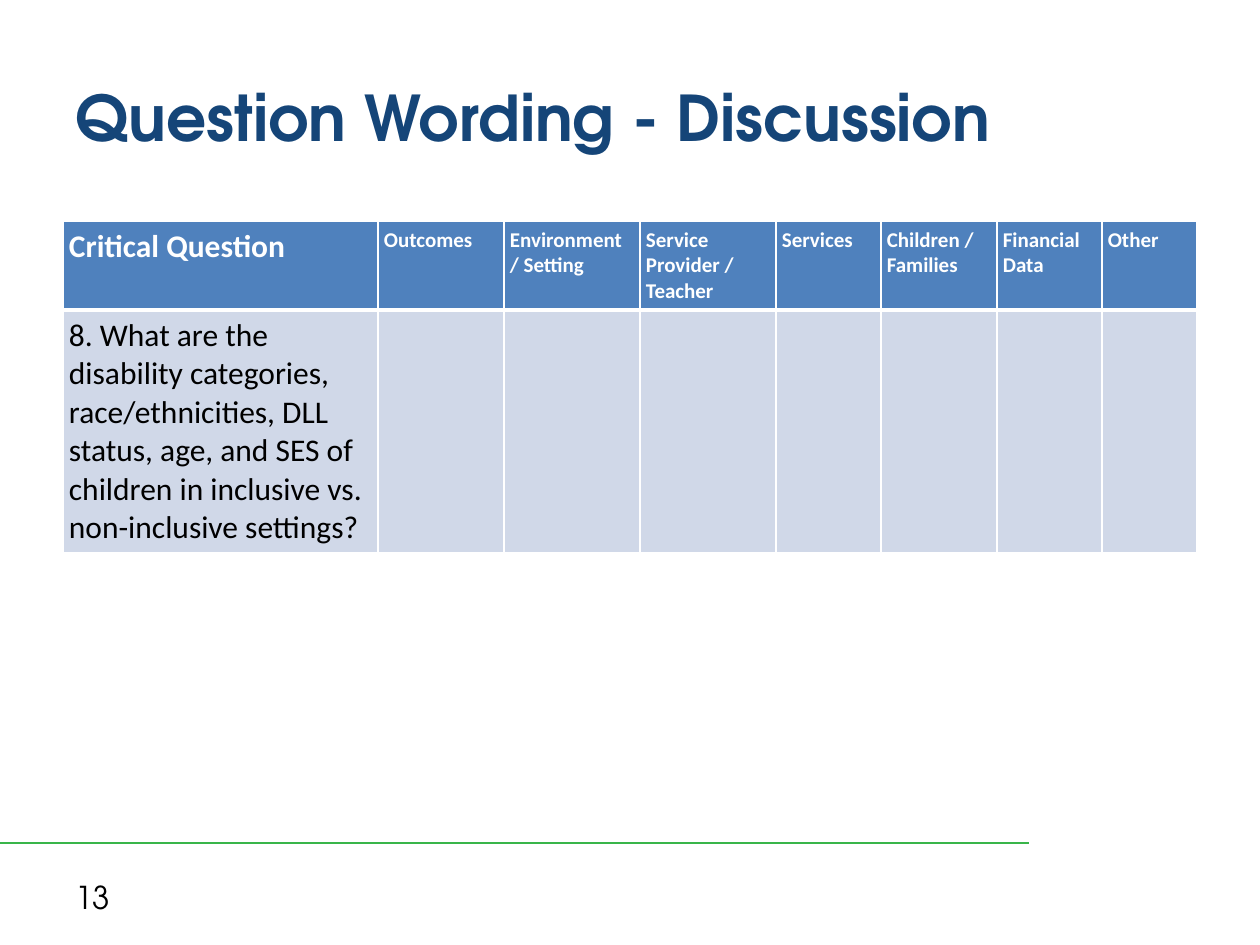
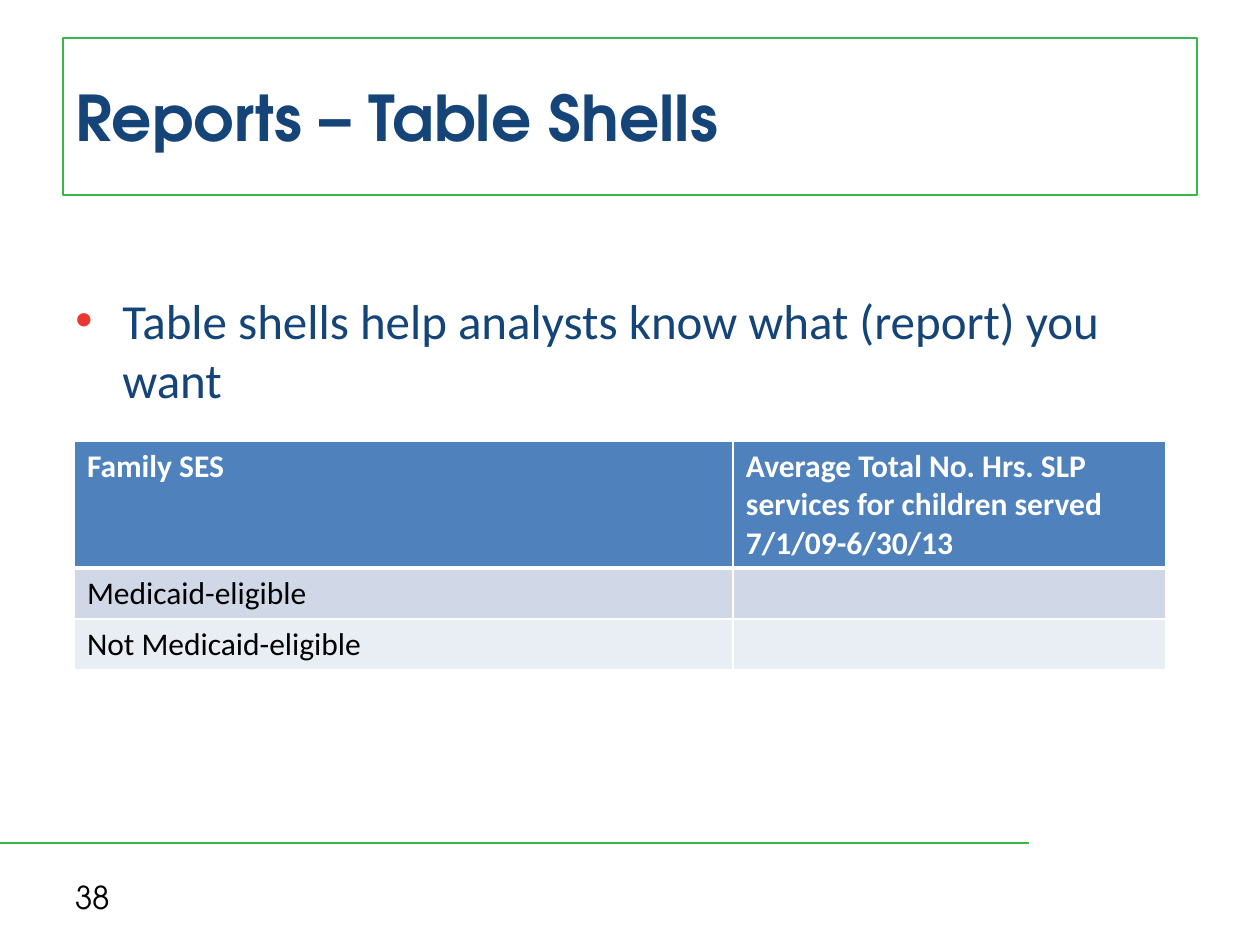
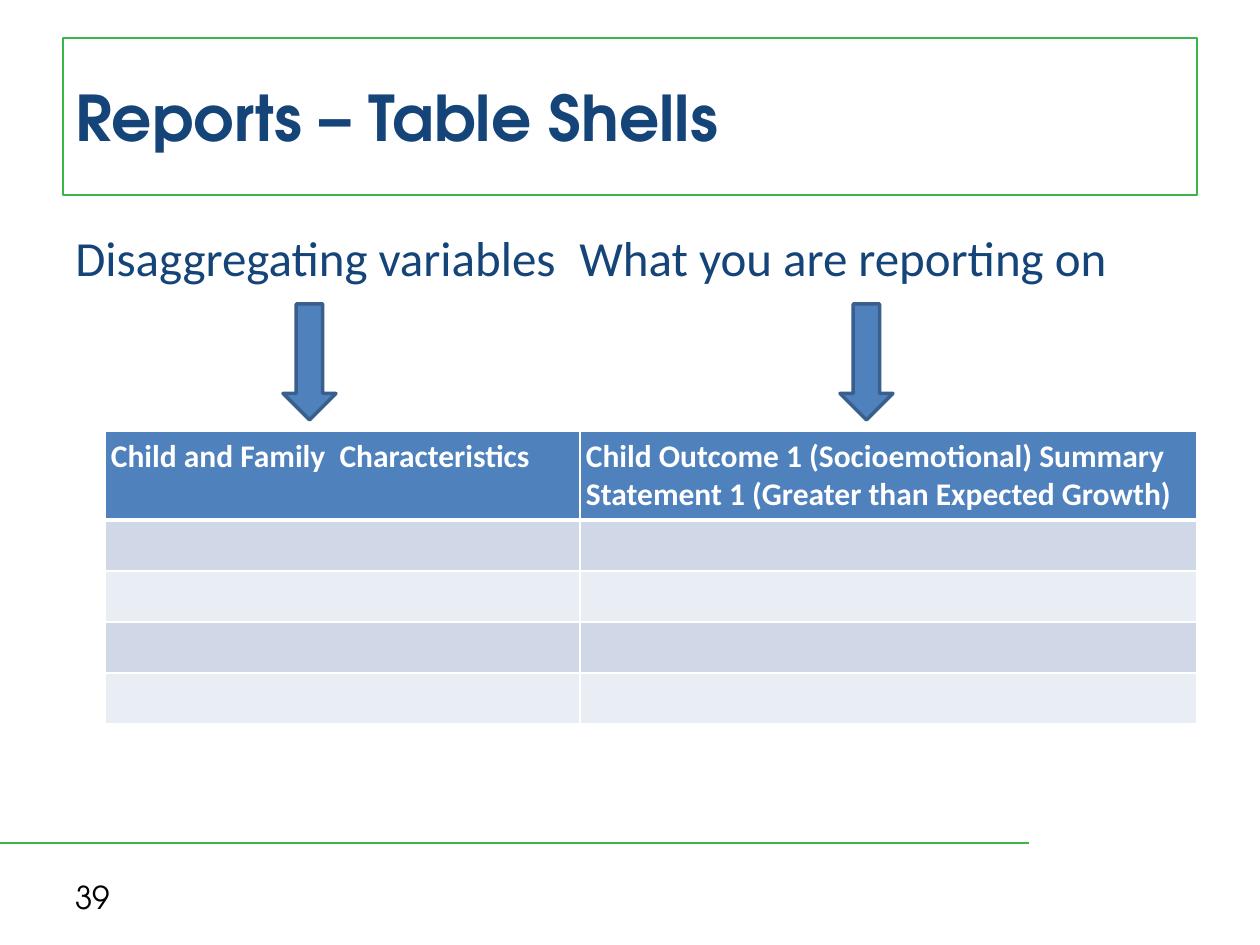
"""Build three slides on question wording and table shells."""
from dataclasses import dataclass

from lxml.etree import SubElement
from pptx import Presentation
from pptx.dml.color import RGBColor
from pptx.enum.shapes import MSO_CONNECTOR, MSO_SHAPE
from pptx.enum.text import MSO_ANCHOR
from pptx.oxml.ns import qn
from pptx.util import Emu, Pt

SLIDES = [
    {
        "number": "13",
        "title": "Question Wording - Discussion",
        "table": {
            "at": (63, 221), "inset": 6, "header_size": 12,
            "cols": [315, 126, 136, 136, 105, 116, 105, 95],
            "heights": [89, 243],
            "rows": [
                ["Critical Question", "Outcomes", "Environment / Setting",
                 "Service Provider / Teacher", "Services", "Children / Families",
                 "Financial Data", "Other"],
                ["8. What are the disability categories, race/ethnicities, DLL status, "
                 "age, and SES of children in inclusive vs. non-inclusive settings?"],
            ],
        },
    },
    {
        "number": "38",
        "title": "Reports – Table Shells",
        "framed": True,
        "table": {
            "at": (74, 441), "inset": 13, "cols": [659, 433],
            "heights": [127, 51, 51],
            "rows": [
                ["Family SES",
                 "Average Total No. Hrs. SLP services for children served 7/1/09-6/30/13"],
                ["Medicaid-eligible"],
                ["Not Medicaid-eligible"],
            ],
        },
        "body": {"at": (63, 284, 1134, 94), "bullet": "•",
                 "text": "Table shells help analysts know what (report) you want"},
    },
    {
        "number": "39",
        "title": "Reports – Table Shells",
        "framed": True,
        "table": {
            "at": (105, 431), "inset": 6, "cols": [475, 617],
            "heights": [89, 51, 51, 51, 51],
            "rows": [
                ["Child and Family  Characteristics",
                 "Child Outcome 1 (Socioemotional) Summary Statement 1 "
                 "(Greater than Expected Growth)"],
                [], [], [], [],
            ],
        },
        "body": {"at": (63, 221, 1134, 168), "tab": 504,
                 "text": "Disaggregating variables\tWhat you are reporting on"},
        "arrows": [(283, 304, 53, 116), (840, 304, 53, 116)],
    },
]


@dataclass(frozen=True)
class Theme:
    """Colours, fonts and type sizes shared by the slides."""
    navy: str = "154578"
    green: str = "39B54A"
    red: str = "ED3532"
    blue: str = "4F81BD"
    outline: str = "3A5F8C"
    white: str = "FFFFFF"
    black: str = "000000"
    bands: tuple = ("D0D8E8", "E9EDF4")
    display: str = "TeX Gyre Adventor"
    text: str = "Calibri"
    title_size: int = 36
    body_size: int = 28
    base_size: int = 18


T = Theme()
TITLE = {"name": T.display, "size": T.title_size, "bold": True, "color": T.navy}
NUMBER = {"name": T.display, "size": T.base_size, "color": T.black}
BODY = {"name": T.text, "size": T.body_size, "color": T.navy}
CELL = {"name": T.text, "size": T.base_size, "bold": False, "color": T.black}
HEADER = CELL | {"bold": True, "color": T.white}


def px(n):
    """Turn pixels at 126 to the inch into EMU."""
    return Emu(round(n * 914400 / 126))


def rgb(value):
    """Turn a hex string into a colour."""
    return RGBColor.from_string(value)


def write(p, text, fmt):
    """Add one run to a paragraph and format it."""
    r = p.add_run()
    r.text = text
    for key, value in fmt.items():
        if key == "color":
            r.font.color.rgb = rgb(value)
        else:
            setattr(r.font, key, Pt(value) if key == "size" else value)


def outline(shape, color, width):
    """Give a shape or connector a solid line."""
    shape.line.color.rgb = rgb(color)
    shape.line.width = Pt(width)


def add_text(s, at, text, fmt, anchor=MSO_ANCHOR.MIDDLE):
    """Add a wrapped text box and return it."""
    box = s.shapes.add_textbox(*map(px, at))
    tf = box.text_frame
    tf.word_wrap = True
    tf.vertical_anchor = anchor
    write(tf.paragraphs[0], text, fmt)
    return box


def add_frame(s, number, title, framed):
    """Add the footer rule, slide number and title."""
    rule = s.shapes.add_connector(MSO_CONNECTOR.STRAIGHT, *map(px, (0, 843, 1029, 843)))
    outline(rule, T.green, 1.5)
    SubElement(rule._element.spPr, qn("a:effectLst"))
    add_text(s, (63, 872, 294, 50), number, NUMBER)
    box = add_text(s, (63, 38, 1134, 157), title, TITLE)
    if framed:
        outline(box, T.green, 0.75)


def add_borders(cell, bottom):
    """Draw white borders round a cell, with a given bottom width."""
    tcPr = cell._tc.get_or_add_tcPr()
    for side, width in (("L", 1), ("R", 1), ("T", 1), ("B", bottom)):
        ln = SubElement(tcPr, qn(f"a:ln{side}"), w=str(Pt(width)))
        fill = SubElement(ln, qn("a:solidFill"))
        SubElement(fill, qn("a:srgbClr"), val=T.white)


def add_grid(s, at, inset, cols, heights, rows, header_size=T.base_size):
    """Add a table with a blue header and banded rows."""
    table = s.shapes.add_table(len(rows), len(cols), *map(px, (*at, sum(cols), sum(heights)))).table
    for col, width in zip(table.columns, cols):
        col.width = px(width)
    for i, (row, height, texts) in enumerate(zip(table.rows, heights, rows)):
        row.height = px(height)
        for j, cell in enumerate(row.cells):
            cell.margin_left = cell.margin_right = px(inset)
            add_borders(cell, 1 if i else 3)
            cell.fill.solid()
            cell.fill.fore_color.rgb = rgb(T.bands[(i - 1) % 2] if i else T.blue)
            if j < len(texts):
                fmt = CELL if i else HEADER | ({"size": header_size} if j else {})
                write(cell.text_frame.paragraphs[0], texts[j], fmt)


def add_body(s, at, text, bullet=None, tab=None):
    """Add body text with an optional bullet or tab stop."""
    p = add_text(s, at, text, BODY, MSO_ANCHOR.TOP).text_frame.paragraphs[0]
    pPr = p._p.get_or_add_pPr()
    if bullet:
        pPr.set("marL", str(px(47)))
        pPr.set("indent", str(-px(47)))
        color = SubElement(pPr, qn("a:buClr"))
        SubElement(color, qn("a:srgbClr"), val=T.red)
        SubElement(pPr, qn("a:buFont"), typeface="Arial")
        SubElement(pPr, qn("a:buChar"), char=bullet)
        p.space_after = Pt(6)
    if tab:
        stops = SubElement(pPr, qn("a:tabLst"))
        SubElement(stops, qn("a:tab"), pos=str(px(tab)), algn="l")


def add_arrow(s, at):
    """Add a blue arrow pointing down."""
    arrow = s.shapes.add_shape(MSO_SHAPE.DOWN_ARROW, *map(px, at))
    arrow.shadow.inherit = False
    arrow.fill.solid()
    arrow.fill.fore_color.rgb = rgb(T.blue)
    outline(arrow, T.outline, 2)


def main():
    """Build and save the presentation."""
    prs = Presentation()
    prs.slide_width, prs.slide_height = px(1260), px(945)
    for item in SLIDES:
        s = prs.slides.add_slide(prs.slide_layouts[6])
        add_frame(s, item["number"], item["title"], item.get("framed"))
        add_grid(s, **item["table"])
        if "body" in item:
            add_body(s, **item["body"])
        for at in item.get("arrows", []):
            add_arrow(s, at)
    prs.save("out.pptx")


if __name__ == "__main__":
    main()
